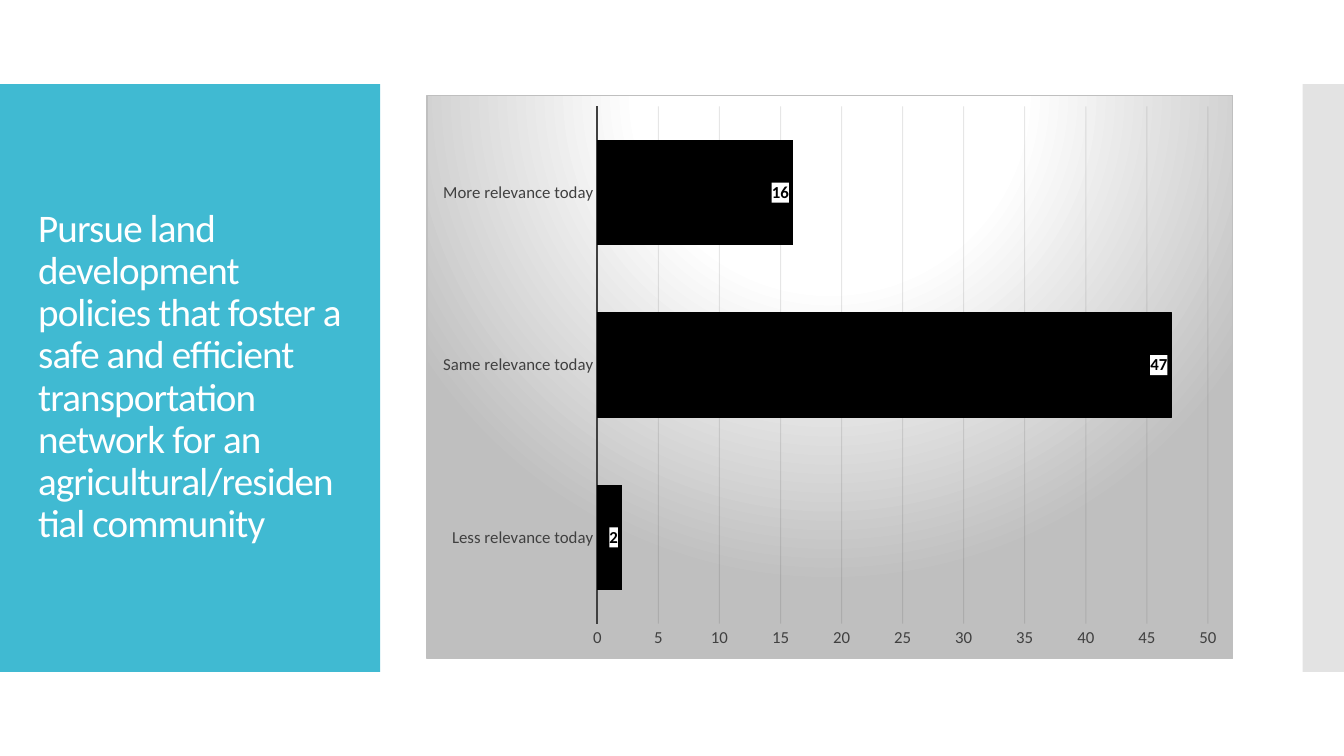
from lxml.etree import SubElement
from pptx import Presentation
from pptx.chart.data import CategoryChartData
from pptx.dml.color import RGBColor
from pptx.enum.chart import XL_CHART_TYPE, XL_LABEL_POSITION, XL_TICK_MARK
from pptx.enum.shapes import MSO_SHAPE
from pptx.enum.text import MSO_ANCHOR
from pptx.oxml import parse_xml
from pptx.oxml.ns import nsdecls, qn
from pptx.util import Inches, Pt

WIDTH, HEIGHT = 13.33, 7.5
BAND_TOP, BAND_HEIGHT = HEIGHT / 9, HEIGHT * 7 / 9
FONT = "Calibri"
COLORS = {
    "panel": "40BAD2",
    "edge": "C8C8C8",
    "white": "FFFFFF",
    "bar": "000000",
    "axis": "404040",
    "grid": "0D0D0D",
    "chart_edge": "BFBFBF",
}
TITLE = (
    "Pursue land development policies that foster a safe and efficient "
    "transportation network for an agricultural/residential community"
)
RESPONSES = {
    "Less relevance today": 2,
    "Same relevance today": 47,
    "More relevance today": 16,
}


def color(name):
    return RGBColor.from_string(COLORS[name])


def set_opacity(element, percent):
    for color_element in element.iter(qn("a:srgbClr")):
        SubElement(color_element, qn("a:alpha")).set("val", str(percent * 1000))


def style_font(font, size, name, bold=False):
    font.name = FONT
    font.size = Pt(size)
    font.bold = bold
    font.color.rgb = color(name)


def style_line(line, name, width):
    line.color.rgb = color(name)
    line.width = Pt(width)


def add_band(slide, left, width, name):
    """Add a full-band rectangle without outline or shadow."""
    shape = slide.shapes.add_shape(
        MSO_SHAPE.RECTANGLE, Inches(left), Inches(BAND_TOP),
        Inches(width), Inches(BAND_HEIGHT),
    )
    shape.shadow.inherit = False
    shape.fill.solid()
    shape.fill.fore_color.rgb = color(name)
    shape.line.fill.background()
    return shape


def add_title(slide):
    box = slide.shapes.add_textbox(
        Inches(0.28), Inches(1.23), Inches(3.22), Inches(5.03)
    )
    frame = box.text_frame
    frame.word_wrap = True
    frame.vertical_anchor = MSO_ANCHOR.MIDDLE
    paragraph = frame.paragraphs[0]
    paragraph.line_spacing = 0.9
    run = paragraph.add_run()
    run.text = TITLE
    style_font(run.font, 27.9, "white")
    run.font._element.set("spc", "-60")


def fill_chart_area(chart):
    """Give the chart a circular gradient and a thin border."""
    stops = "".join(
        f'<a:gs pos="{position * 1000}"><a:srgbClr val="{COLORS[name]}"/></a:gs>'
        for position, name in ((0, "white"), (39, "white"), (100, "chart_edge"))
    )
    properties = parse_xml(
        f'<c:spPr {nsdecls("c", "a")}><a:gradFill><a:gsLst>{stops}</a:gsLst>'
        '<a:path path="circle">'
        '<a:fillToRect l="50000" t="-80000" r="50000" b="180000"/></a:path>'
        f'</a:gradFill><a:ln w="{Pt(0.75)}"><a:solidFill>'
        f'<a:srgbClr val="{COLORS["chart_edge"]}"/></a:solidFill></a:ln></c:spPr>'
    )
    chart.element.find(qn("c:chart")).addnext(properties)


def style_axes(chart):
    for axis in (chart.category_axis, chart.value_axis):
        axis.major_tick_mark = axis.minor_tick_mark = XL_TICK_MARK.NONE
        style_font(axis.tick_labels.font, 12, "axis")
    chart.category_axis.has_major_gridlines = False
    style_line(chart.category_axis.format.line, "axis", 1.5)

    value_axis = chart.value_axis
    value_axis.minimum_scale, value_axis.maximum_scale = 0, 50
    value_axis.major_unit = 5
    value_axis.format.line.fill.background()
    style_line(value_axis.major_gridlines.format.line, "grid", 0.75)
    set_opacity(value_axis._element.find(qn("c:majorGridlines")), 10)


def style_bars(plot):
    plot.gap_width = 65
    plot.vary_by_categories = False
    series = plot.series[0]
    series.format.fill.solid()
    series.format.fill.fore_color.rgb = color("bar")
    style_line(series.format.line, "bar", 0.75)

    labels = series.data_labels
    labels.show_value = True
    labels.position = XL_LABEL_POSITION.INSIDE_END
    style_font(labels.font, 12, "bar", bold=True)
    labels._element.find(qn("c:txPr")).addprevious(parse_xml(
        f'<c:spPr {nsdecls("c", "a")}><a:solidFill>'
        f'<a:srgbClr val="{COLORS["white"]}"/></a:solidFill></c:spPr>'
    ))


def add_relevance_chart(slide):
    data = CategoryChartData()
    data.categories = list(RESPONSES)
    data.add_series("Series 1", list(RESPONSES.values()))
    chart = slide.shapes.add_chart(
        XL_CHART_TYPE.BAR_CLUSTERED, Inches(4.23), Inches(0.94),
        Inches(8), Inches(5.6), data,
    ).chart
    chart.has_legend = False
    chart.has_title = False
    style_font(chart.font, 10, "bar")
    fill_chart_area(chart)
    style_axes(chart)
    style_bars(chart.plots[0])


def main():
    presentation = Presentation()
    presentation.slide_width = Inches(WIDTH)
    presentation.slide_height = Inches(HEIGHT)
    slide = presentation.slides.add_slide(presentation.slide_layouts[6])
    add_band(slide, 0, 3.77, "panel")
    edge = add_band(slide, 12.92, WIDTH - 12.92, "edge")
    set_opacity(edge.fill._xPr, 50)
    add_title(slide)
    add_relevance_chart(slide)
    presentation.save("out.pptx")


if __name__ == "__main__":
    main()
